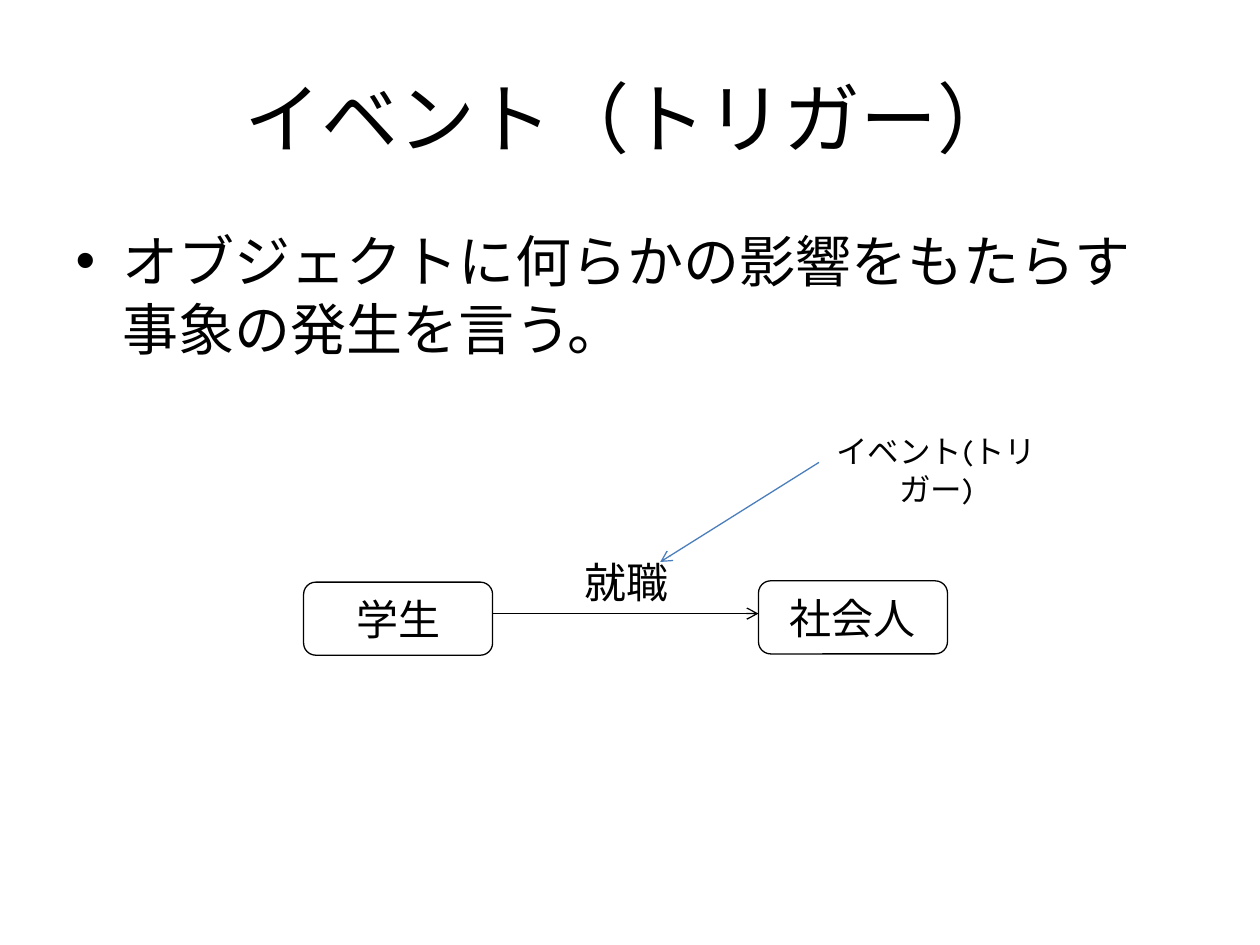
from dataclasses import dataclass

from pptx import Presentation
from pptx.dml.color import RGBColor
from pptx.enum.lang import MSO_LANGUAGE_ID
from pptx.enum.shapes import MSO_CONNECTOR, MSO_SHAPE
from pptx.enum.text import MSO_ANCHOR, PP_ALIGN
from pptx.oxml.ns import qn
from pptx.util import Emu, Pt
from lxml.etree import SubElement

EMU_PER_PX = 9144
BLACK = "000000"
BLUE = "4B7EBC"


@dataclass
class Box:
    left: int
    top: int
    width: int
    height: int


@dataclass
class State:
    text: str
    box: Box


@dataclass
class Label:
    text: str
    box: Box
    size: int


@dataclass
class Arrow:
    start: tuple[int, int]
    end: tuple[int, int]
    color: str


TITLE = Label("イベント（トリガー）", Box(50, 30, 900, 125), 44)
BODY = Label("オブジェクトに何らかの影響をもたらす事象の発生を言う。", Box(50, 175, 900, 184), 32)
STATES = [
    State("社会人", Box(602, 461, 150, 58)),
    State("学生", Box(241, 462, 150, 58)),
]
LABELS = [
    Label("就職", Box(443, 437, 108, 50), 24),
    Label("イベント(トリガー)", Box(633, 338, 220, 40), 18),
]
TRANSITION = Arrow((391, 487), (602, 487), BLACK)
POINTER = Arrow((650, 367), (524, 446), BLUE)


def px(value: int) -> Emu:
    return Emu(value * EMU_PER_PX)


def rgb(color: str) -> RGBColor:
    return RGBColor.from_string(color)


def bounds(box: Box) -> tuple[Emu, ...]:
    return px(box.left), px(box.top), px(box.width), px(box.height)


def write_text(shape, text: str, *, size: int, font: str = "Karla",
               color: str = BLACK, align=PP_ALIGN.CENTER,
               anchor=MSO_ANCHOR.TOP, wrap: bool = True) -> None:
    frame = shape.text_frame
    frame.word_wrap = wrap
    frame.vertical_anchor = anchor
    paragraph = frame.paragraphs[0]
    paragraph.alignment = align
    run = paragraph.add_run()
    run.text = text
    run.font.name = font
    run.font.size = Pt(size)
    run.font.color.rgb = rgb(color)
    run.font.language_id = MSO_LANGUAGE_ID.JAPANESE


def fill_placeholder(placeholder, label: Label, **text_format) -> None:
    placeholder.left, placeholder.top, placeholder.width, placeholder.height = bounds(label.box)
    write_text(placeholder, label.text, size=label.size, font="Calibri", **text_format)


def draw_state(slide, state: State) -> None:
    shape = slide.shapes.add_shape(MSO_SHAPE.FLOWCHART_ALTERNATE_PROCESS, *bounds(state.box))
    shape.shadow.inherit = False
    shape.fill.background()
    shape.line.color.rgb = rgb(BLACK)
    shape.line.width = Pt(0.75)
    write_text(shape, state.text, size=24, anchor=MSO_ANCHOR.MIDDLE, wrap=False)


def draw_label(slide, label: Label) -> None:
    shape = slide.shapes.add_textbox(*bounds(label.box))
    write_text(shape, label.text, size=label.size)


def draw_arrow(slide, arrow: Arrow) -> None:
    points = [px(value) for value in (*arrow.start, *arrow.end)]
    connector = slide.shapes.add_connector(MSO_CONNECTOR.STRAIGHT, *points)
    connector.line.color.rgb = rgb(arrow.color)
    connector.line.width = Pt(0.75)
    properties = connector.line._get_or_add_ln()
    SubElement(properties, qn("a:tailEnd"), type="arrow")
    SubElement(properties.getparent(), qn("a:effectLst"))


def main() -> None:
    presentation = Presentation()
    presentation.slide_width = px(1000)
    presentation.slide_height = px(750)
    slide = presentation.slides.add_slide(presentation.slide_layouts[1])
    fill_placeholder(slide.shapes.title, TITLE, anchor=MSO_ANCHOR.MIDDLE)
    fill_placeholder(slide.placeholders[1], BODY, align=PP_ALIGN.LEFT)
    draw_arrow(slide, TRANSITION)
    for state in STATES:
        draw_state(slide, state)
    for label in LABELS:
        draw_label(slide, label)
    draw_arrow(slide, POINTER)
    presentation.save("out.pptx")


if __name__ == "__main__":
    main()
